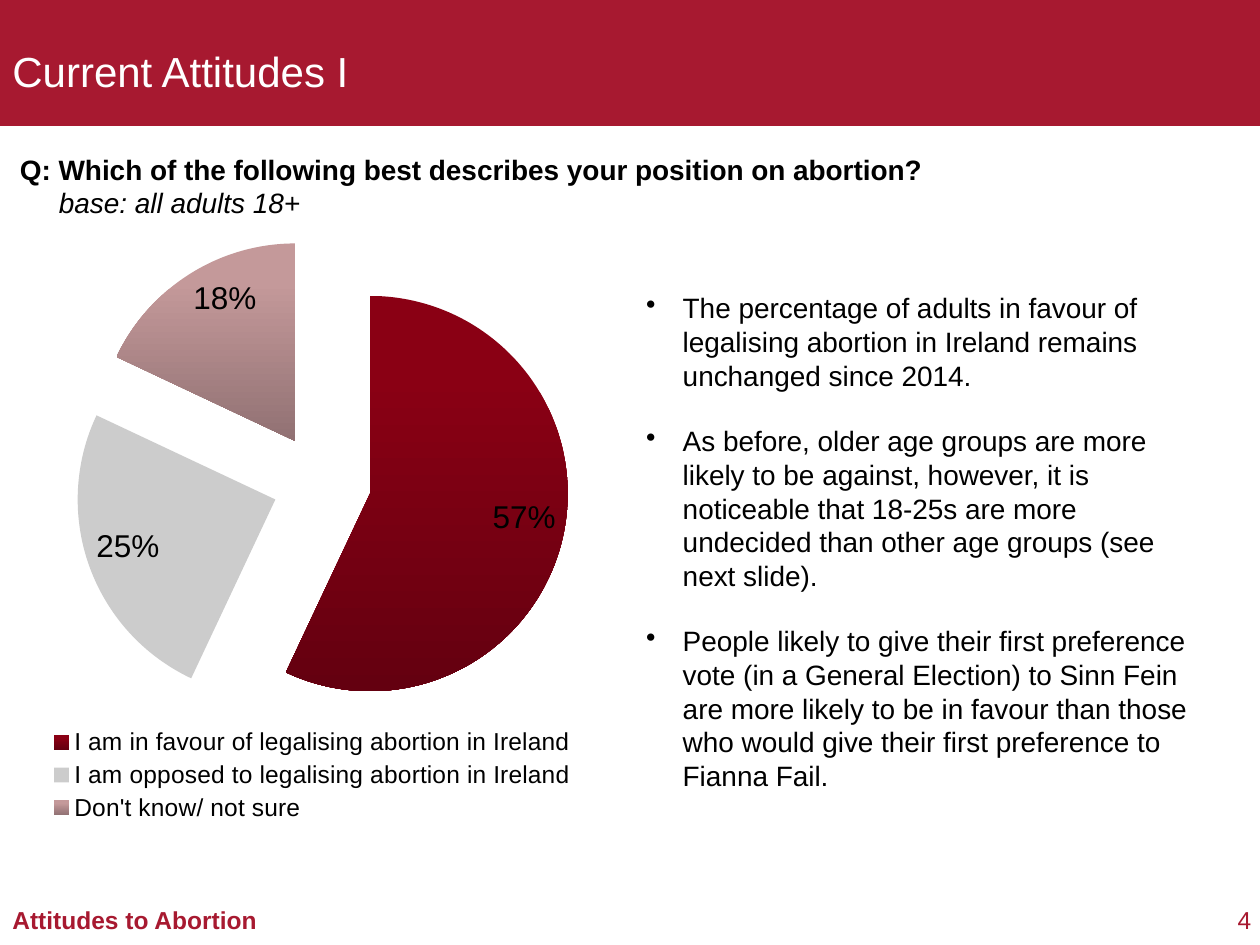
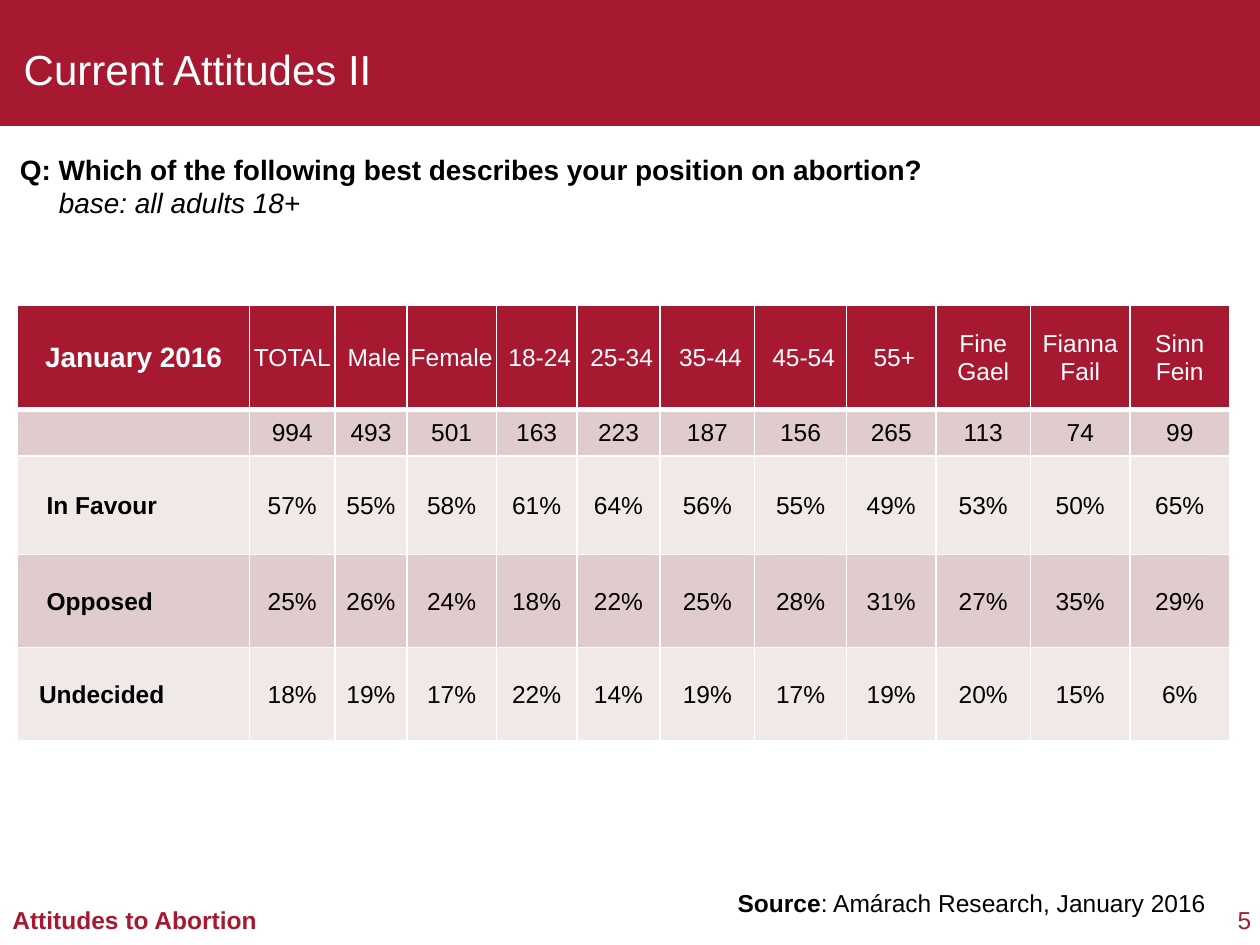
from dataclasses import dataclass
from typing import NamedTuple

import pptx
import pptx.chart.data
import pptx.dml.color
import pptx.enum.chart
import pptx.enum.shapes
import pptx.enum.text
import pptx.oxml
import pptx.oxml.ns
import pptx.util
from lxml import etree

Inches = pptx.util.Inches
Pt = pptx.util.Pt
qn = pptx.oxml.ns.qn
ALIGN = pptx.enum.text.PP_ALIGN
ANCHOR = pptx.enum.text.MSO_ANCHOR


@dataclass(frozen=True)
class Theme:
    font: str = "Arial"
    crimson: str = "A71930"
    white: str = "FFFFFF"
    black: str = "000000"
    band_dark: str = "E1CCCD"
    band_light: str = "F1E8E8"
    title: int = 24
    label: int = 18
    body: int = 16
    small: int = 14


class Box(NamedTuple):
    left: float
    top: float
    width: float
    height: float


class Answer(NamedTuple):
    text: str
    share: float
    top_color: str
    bottom_color: str


class Column(NamedTuple):
    heading: str
    width: float
    pad: float
    values: tuple[str, ...]


class Row(NamedTuple):
    label: str
    height: float
    pad: float
    fill: str


THEME = Theme()
QUESTION = "Q: Which of the following best describes your position on abortion?"
ANSWERS = [
    Answer("I am in favour of legalising abortion in Ireland", 0.57, "8A0014", "640010"),
    Answer("I am opposed to legalising abortion in Ireland", 0.25, "CCCCCC", "CCCCCC"),
    Answer("Don't know/ not sure", 0.18, "C4999A", "917173"),
]
FINDINGS = [
    "The percentage of adults in favour of legalising abortion in Ireland remains unchanged since 2014.",
    "As before, older age groups are more likely to be against, however, it is noticeable that "
    "18-25s are more undecided than other age groups (see next slide).",
    "People likely to give their first preference vote (in a General Election) to Sinn Fein are more "
    "likely to be in favour than those who would give their first preference to Fianna Fail.",
]
ROWS = [
    Row("", 0.37, 0.01, THEME.band_dark),
    Row("In Favour", 0.78, 0.23, THEME.band_light),
    Row("Opposed", 0.74, 0.23, THEME.band_dark),
    Row("Undecided", 0.74, 0.17, THEME.band_light),
]
HEADER_HEIGHT = 0.83
LABEL_WIDTH = 1.84
COLUMNS = [
    Column("TOTAL", 0.68, 0.01, ("994", "57%", "25%", "18%")),
    Column("Male", 0.57, 0.06, ("493", "55%", "26%", "19%")),
    Column("Female", 0.71, 0.01, ("501", "58%", "24%", "17%")),
    Column("18-24", 0.64, 0.06, ("163", "61%", "18%", "22%")),
    Column("25-34", 0.66, 0.06, ("223", "64%", "22%", "14%")),
    Column("35-44", 0.75, 0.06, ("187", "56%", "25%", "19%")),
    Column("45-54", 0.73, 0.06, ("156", "55%", "28%", "17%")),
    Column("55+", 0.71, 0.06, ("265", "49%", "31%", "19%")),
    Column("Fine Gael", 0.75, 0.01, ("113", "53%", "27%", "20%")),
    Column("Fianna Fail", 0.79, 0.01, ("74", "50%", "35%", "15%")),
    Column("Sinn Fein", 0.79, 0.01, ("99", "65%", "29%", "6%")),
]


def rgb(color: str):
    return pptx.dml.color.RGBColor.from_string(color)


def write(p, text: str, *, size: int = THEME.body, color: str = THEME.black,
          bold: bool = False, italic: bool = False, align=ALIGN.LEFT) -> None:
    p.alignment = align
    r = p.add_run()
    r.text = text
    r.font.name = THEME.font
    r.font.size = Pt(size)
    r.font.color.rgb = rgb(color)
    r.font.bold = bold
    r.font.italic = italic


def add_box(sl, box: Box, anchor=ANCHOR.TOP):
    tf = sl.shapes.add_textbox(*map(Inches, box)).text_frame
    tf.word_wrap = True
    tf.vertical_anchor = anchor
    return tf


def indent(p, left: float, first: float) -> None:
    pPr = p._p.get_or_add_pPr()
    pPr.set("marL", str(Inches(left)))
    pPr.set("indent", str(Inches(first)))


def add_base(prs, title: str, title_box: Box, number: int):
    sl = prs.slides.add_slide(prs.slide_layouts[6])
    band = sl.shapes.add_shape(pptx.enum.shapes.MSO_SHAPE.RECTANGLE, 0, 0, prs.slide_width, Inches(1))
    band.shadow.inherit = False
    band.fill.solid()
    band.fill.fore_color.rgb = rgb(THEME.crimson)
    band.line.fill.background()
    write(add_box(sl, title_box, ANCHOR.MIDDLE).paragraphs[0], title,
          size=THEME.title, color=THEME.white)

    tf = add_box(sl, Box(0.06, 1.16, 9.94, 0.64))
    write(tf.paragraphs[0], QUESTION, bold=True)
    p = tf.add_paragraph()
    indent(p, 0.31, 0)
    write(p, "base: all adults 18+", italic=True)

    write(add_box(sl, Box(0, 7.13, 3, 0.34)).paragraphs[0], "Attitudes to Abortion",
          size=THEME.small, color=THEME.crimson, bold=True)
    tf = add_box(sl, Box(9.69, 7.18, 0.24, 0.23))
    tf.margin_left = tf.margin_right = tf.margin_top = tf.margin_bottom = 0
    write(tf.paragraphs[0], str(number), size=THEME.small, color=THEME.crimson, align=ALIGN.RIGHT)
    return sl


def style_font(font, size: int) -> None:
    font.name = THEME.font
    font.size = Pt(size)
    font.color.rgb = rgb(THEME.black)


def place_plot(chart, x: float, y: float, w: float, h: float) -> None:
    area = chart._chartSpace.chart.plotArea
    for old in area.findall(qn("c:layout")):
        area.remove(old)
    layout = etree.Element(qn("c:layout"))
    manual = etree.SubElement(layout, qn("c:manualLayout"))
    settings = dict(layoutTarget="inner", xMode="edge", yMode="edge", x=x, y=y, w=w, h=h)
    for tag, value in settings.items():
        etree.SubElement(manual, qn(f"c:{tag}")).set("val", str(value))
    area.insert(0, layout)


def add_pie(sl, box: Box) -> None:
    data = pptx.chart.data.CategoryChartData(number_format="0%")
    data.categories = [a.text for a in ANSWERS]
    data.add_series("Series 1", [a.share for a in ANSWERS])
    chart = sl.shapes.add_chart(pptx.enum.chart.XL_CHART_TYPE.PIE, *map(Inches, box), data).chart
    style_font(chart.font, THEME.label)
    chart.has_title = False
    chart.has_legend = True
    chart.legend.position = pptx.enum.chart.XL_LEGEND_POSITION.BOTTOM
    chart.legend.include_in_layout = False
    style_font(chart.legend.font, THEME.small)
    place_plot(chart, 0.036, 0.015, 0.961, 0.824)

    plot = chart.plots[0]
    plot.vary_by_categories = True
    series = plot.series[0]
    explosion = etree.Element(qn("c:explosion"))
    explosion.set("val", "25")
    series._element.find(qn("c:tx")).addnext(explosion)
    for i, answer in enumerate(ANSWERS):
        fmt = series.points[i].format
        fmt.line.fill.background()
        if answer.top_color == answer.bottom_color:
            fmt.fill.solid()
            fmt.fill.fore_color.rgb = rgb(answer.top_color)
            continue
        fmt.fill.gradient()
        fmt.fill.gradient_angle = 270
        start, end = fmt.fill.gradient_stops
        start.position = 0.2
        start.color.rgb = rgb(answer.top_color)
        end.color.rgb = rgb(answer.bottom_color)

    plot.has_data_labels = True
    labels = plot.data_labels
    labels.show_value = True
    labels.show_percentage = False
    labels.number_format = "0%"
    labels.number_format_is_linked = False
    labels.position = pptx.enum.chart.XL_LABEL_POSITION.INSIDE_END
    style_font(labels.font, THEME.label)


def add_bullets(sl, box: Box, items: list[str]) -> None:
    tf = add_box(sl, box)
    for i, item in enumerate(items):
        p = tf.add_paragraph() if i else tf.paragraphs[0]
        indent(p, 0.29, -0.29)
        etree.SubElement(p._p.get_or_add_pPr(), qn("a:buChar")).set("char", "•")
        if i:
            p.space_before = Pt(18.4)
        write(p, item)


def style_cell(cell, fill: str, pad: float, top: float = 1, bottom: float = 1) -> None:
    cell.vertical_anchor = ANCHOR.MIDDLE
    cell.margin_left = Inches(pad)
    cell.margin_right = cell.margin_top = Inches(0.01)
    cell.margin_bottom = 0
    cell.fill.solid()
    cell.fill.fore_color.rgb = rgb(fill)
    tcPr = cell._tc.get_or_add_tcPr()
    for i, (side, width) in enumerate(dict(L=1, R=1, T=top, B=bottom).items()):
        ln = etree.Element(qn(f"a:ln{side}"))
        ln.set("w", str(Pt(width)))
        solid = etree.SubElement(ln, qn("a:solidFill"))
        etree.SubElement(solid, qn("a:srgbClr")).set("val", THEME.white)
        tcPr.insert(i, ln)


def add_results(sl, box: Box) -> None:
    table = sl.shapes.add_table(len(ROWS) + 1, len(COLUMNS) + 1, *map(Inches, box)).table
    table.first_row = table.horz_banding = False
    for col, width in zip(table.columns, [LABEL_WIDTH] + [c.width for c in COLUMNS]):
        col.width = Inches(width)
    for row, height in zip(table.rows, [HEADER_HEIGHT] + [r.height for r in ROWS]):
        row.height = Inches(height)

    def fill_cell(i: int, j: int, text: str, fill: str, pad: float, **fmt) -> None:
        cell = table.cell(i, j)
        style_cell(cell, fill, pad, top=3 if i == 1 else 1, bottom=1 if i else 3)
        if text:
            write(cell.text_frame.paragraphs[0], text, **{"size": THEME.small, **fmt})

    fill_cell(0, 0, "January 2016", THEME.crimson, 0.01, size=THEME.body,
              color=THEME.white, bold=True, align=ALIGN.CENTER)
    for i, row in enumerate(ROWS, 1):
        fill_cell(i, 0, row.label, row.fill, row.pad, bold=True)
    for j, column in enumerate(COLUMNS, 1):
        fill_cell(0, j, column.heading, THEME.crimson, column.pad,
                  color=THEME.white, align=ALIGN.CENTER)
        for i, (row, value) in enumerate(zip(ROWS, column.values), 1):
            fill_cell(i, j, value, row.fill, 0.01, align=ALIGN.CENTER)


def main() -> None:
    prs = pptx.Presentation()
    prs.slide_width, prs.slide_height = Inches(10), Inches(7.5)

    sl = add_base(prs, "Current Attitudes I", Box(0, 0.28, 7.66, 0.57), 4)
    add_pie(sl, Box(0.21, 1.8, 4.54, 4.76))
    add_bullets(sl, Box(5.03, 2.26, 4.52, 4.41), FINDINGS)

    sl = add_base(prs, "Current Attitudes II", Box(0.09, 0.26, 7.66, 0.57), 5)
    add_results(sl, Box(0.14, 2.42, 9.61, 3.47))
    p = add_box(sl, Box(4.97, 7, 4.7, 0.34)).paragraphs[0]
    write(p, "Source", size=THEME.small, bold=True, align=ALIGN.RIGHT)
    write(p, ": Amárach Research, January 2016", size=THEME.small, align=ALIGN.RIGHT)

    prs.save("out.pptx")


if __name__ == "__main__":
    main()
